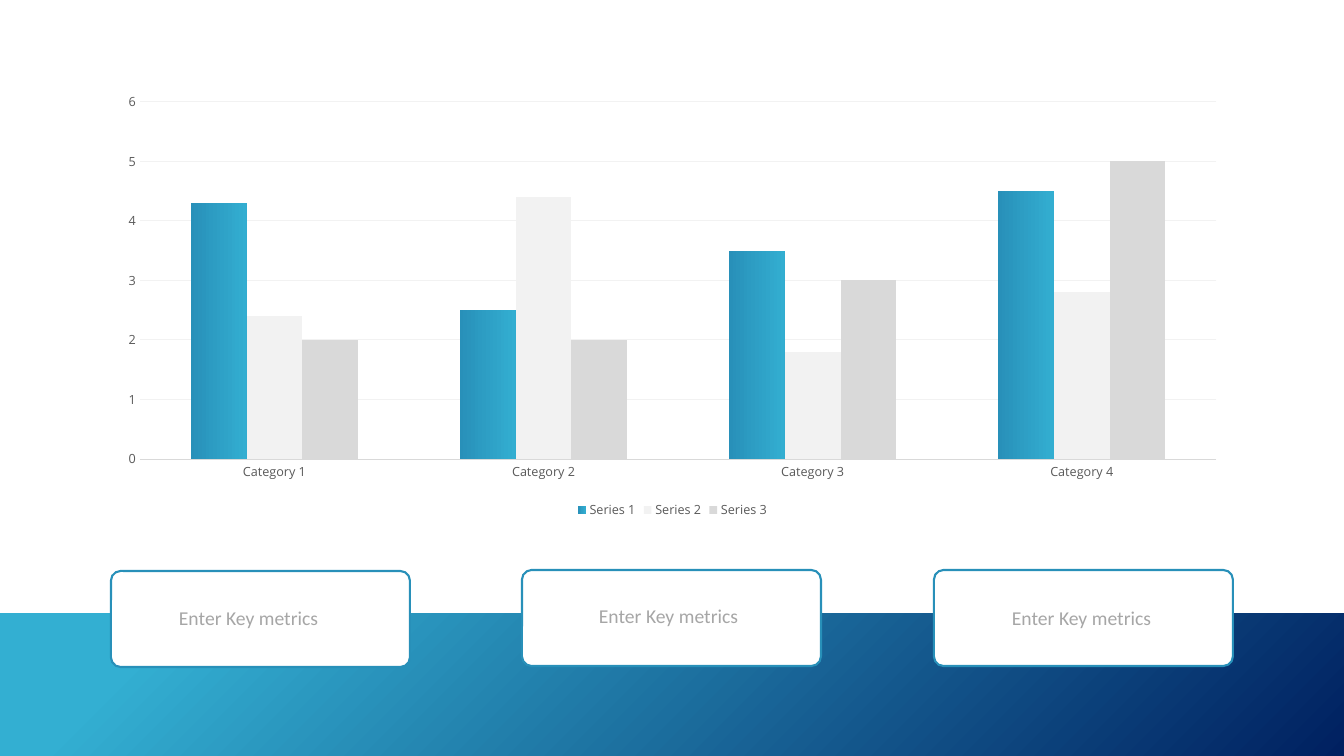
from dataclasses import dataclass

from pptx import Presentation
from pptx.chart.data import CategoryChartData
from pptx.dml.color import RGBColor
from pptx.dml.fill import FillFormat
from pptx.enum.chart import XL_CHART_TYPE as ChartType
from pptx.enum.chart import XL_LEGEND_POSITION as LegendPos
from pptx.enum.chart import XL_TICK_MARK as Tick
from pptx.enum.shapes import MSO_SHAPE as Shape
from pptx.slide import Slide
from pptx.text.text import Font
from pptx.util import Emu, Pt

EMU_PER_PX = 12192000 / 1344
SLIDE_W, SLIDE_H = 1344, 756
BAND_TOP = 613
CARD_W, CARD_H = 299, 96
LABEL_W, LABEL_H = 182, 34
GREY_TEXT = "595959"
CATEGORIES = [f"Category {n}" for n in range(1, 5)]


@dataclass(frozen=True)
class Stop:
    position: float
    color: str


@dataclass(frozen=True)
class Series:
    name: str
    values: tuple[float, ...]
    stops: tuple[Stop, ...]


@dataclass(frozen=True)
class Card:
    left: int
    top: int
    label_left: int
    label_top: int


SERIES = (
    Series("Series 1", (4.3, 2.5, 3.5, 4.5), (Stop(0, "2890B9"), Stop(1, "33AED1"))),
    Series("Series 2", (2.4, 4.4, 1.8, 2.8), (Stop(0, "F2F2F2"),)),
    Series("Series 3", (2, 2, 3, 5), (Stop(0, "D9D9D9"),)),
)
CARDS = (
    Card(111, 571, 169, 601),
    Card(522, 570, 589, 599),
    Card(934, 570, 1002, 601),
)


def px(*lengths: int) -> list[Emu]:
    return [Emu(round(n * EMU_PER_PX)) for n in lengths]


def rgb(color: str) -> RGBColor:
    return RGBColor.from_string(color)


def paint(fill: FillFormat, stops: tuple[Stop, ...], angle: float = 0) -> None:
    """Fill solidly with one stop, or with a gradient with two."""
    if len(stops) == 1:
        fill.solid()
        fill.fore_color.rgb = rgb(stops[0].color)
        return
    fill.gradient()
    fill.gradient_angle = angle
    for target, stop in zip(fill.gradient_stops, stops):
        target.position = stop.position
        target.color.rgb = rgb(stop.color)


def style_font(font: Font, name: str, size: int, color: str) -> None:
    font.name = name
    font.size = Pt(size)
    font.color.rgb = rgb(color)


def add_band(slide: Slide) -> None:
    box = px(0, BAND_TOP, SLIDE_W, SLIDE_H - BAND_TOP)
    sp = slide.shapes.add_shape(Shape.RECTANGLE, *box)
    sp.shadow.inherit = False
    sp.line.fill.background()
    paint(sp.fill, (Stop(0.12, "33AFD2"), Stop(1, "002060")), angle=315)


def add_column_chart(slide: Slide) -> None:
    data = CategoryChartData()
    data.categories = CATEGORIES
    for series in SERIES:
        data.add_series(series.name, series.values)
    frame = slide.shapes.add_chart(
        ChartType.COLUMN_CLUSTERED, *px(106, 84, 1133, 439), data
    )
    chart = frame.chart
    style_font(chart.font, "Open Sans", 9, "000000")
    chart.has_title = False
    chart.has_legend = True
    chart.legend.position = LegendPos.BOTTOM
    chart.legend.include_in_layout = False
    style_font(chart.legend.font, "Open Sans", 9, GREY_TEXT)

    plot = chart.plots[0]
    plot.vary_by_categories = False
    plot.gap_width = 182
    plot.overlap = 0
    for drawn, series in zip(plot.series, SERIES):
        drawn.invert_if_negative = False
        paint(drawn.format.fill, series.stops)

    for axis in (chart.category_axis, chart.value_axis):
        axis.major_tick_mark = axis.minor_tick_mark = Tick.NONE
        style_font(axis.tick_labels.font, "Open Sans", 9, GREY_TEXT)
    base = chart.category_axis.format.line
    base.width = Pt(0.75)
    base.color.rgb = rgb("D9D9D9")

    values = chart.value_axis
    values.minimum_scale, values.maximum_scale, values.major_unit = 0, 6, 1
    values.format.line.fill.background()
    values.has_major_gridlines = True
    grid = values.major_gridlines.format.line
    grid.width = Pt(0.75)
    grid.color.rgb = rgb("F2F2F2")


def add_card(slide: Slide, card: Card) -> None:
    box = px(card.left, card.top, CARD_W, CARD_H)
    sp = slide.shapes.add_shape(Shape.ROUNDED_RECTANGLE, *box)
    sp.adjustments[0] = 0.1
    sp.shadow.inherit = False
    paint(sp.fill, (Stop(0, "FFFFFF"),))
    sp.line.color.rgb = rgb("2890B9")
    sp.line.width = Pt(1.5)

    label = px(card.label_left, card.label_top, LABEL_W, LABEL_H)
    tf = slide.shapes.add_textbox(*label).text_frame
    tf.word_wrap = True
    p = tf.paragraphs[0]
    p.text = "Enter Key metrics"
    style_font(p.font, "Calibri", 14, "A6A6A6")


def main() -> None:
    prs = Presentation()
    prs.slide_width, prs.slide_height = px(SLIDE_W, SLIDE_H)
    slide = prs.slides.add_slide(prs.slide_layouts[6])
    add_band(slide)
    add_column_chart(slide)
    for card in CARDS:
        add_card(slide, card)
    prs.save("out.pptx")


if __name__ == "__main__":
    main()
